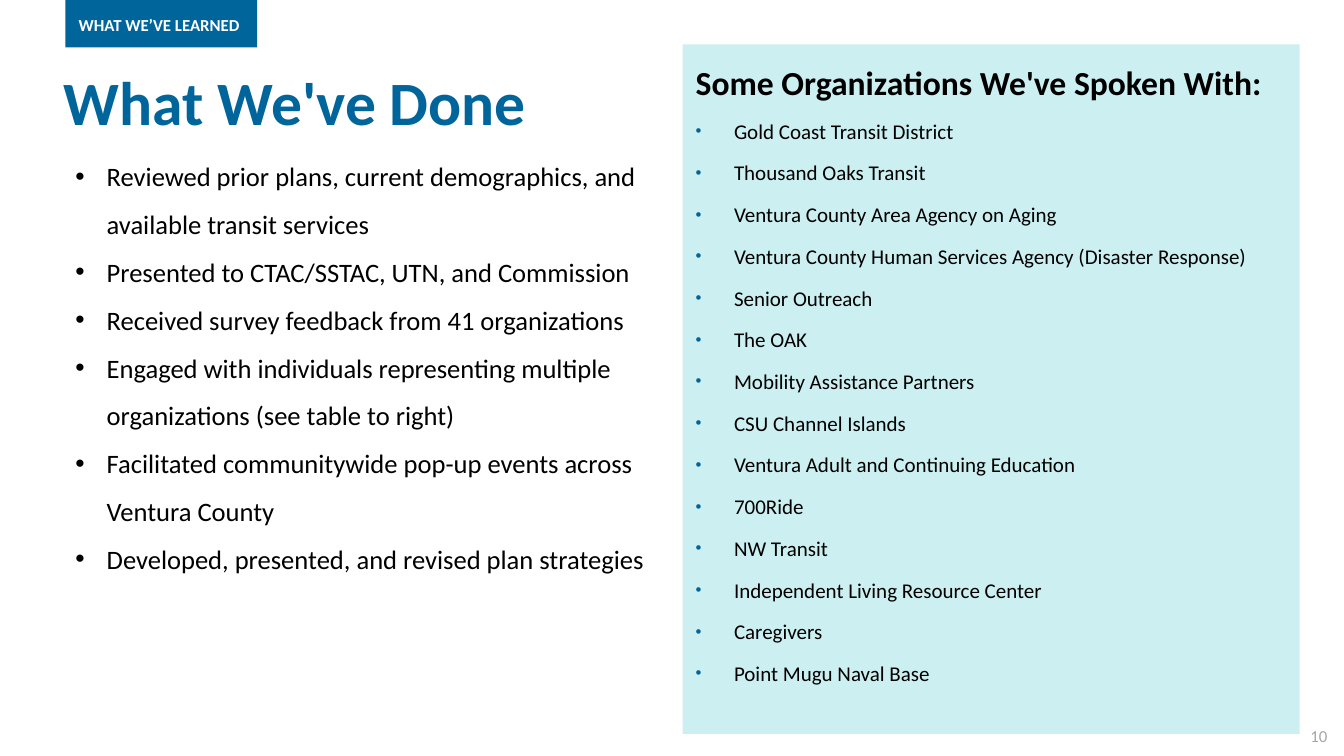
import pptx
import pptx.util
import pptx.dml.color
import pptx.enum.shapes
import pptx.enum.text
import lxml.etree

RGBColor = pptx.dml.color.RGBColor
Inches = pptx.util.Inches
Pt = pptx.util.Pt
PP_ALIGN = pptx.enum.text.PP_ALIGN
MSO_ANCHOR = pptx.enum.text.MSO_ANCHOR

BLUE = RGBColor(0x00, 0x65, 0x9A)
AQUA = RGBColor(0xCC, 0xEF, 0xF1)
GREY = RGBColor(0xA6, 0xA6, 0xA6)
BLACK = RGBColor(0, 0, 0)
WHITE = RGBColor(255, 255, 255)
FONT = "Calibri"
WIDTH, HEIGHT = 13.33, 7.5
PAD = 0.13

DONE = [
    "Reviewed prior plans, current demographics, and available transit services",
    "Presented to CTAC/SSTAC, UTN, and Commission",
    "Received survey feedback from 41 organizations",
    "Engaged with individuals representing multiple organizations (see table to right)",
    "Facilitated communitywide pop-up events across Ventura County",
    "Developed, presented, and revised plan strategies",
]
ORGANIZATIONS = [
    "Gold Coast Transit District",
    "Thousand Oaks Transit",
    "Ventura County Area Agency on Aging",
    "Ventura County Human Services Agency (Disaster Response)",
    "Senior Outreach",
    "The OAK",
    "Mobility Assistance Partners",
    "CSU Channel Islands",
    "Ventura Adult and Continuing Education",
    "700Ride",
    "NW Transit",
    "Independent Living Resource Center",
    "Caregivers",
    "Point Mugu Naval Base",
]


def set_bullet(p, indent, color=None, percent=None):
    """Give the paragraph a hanging round bullet."""
    pPr = p._p.get_or_add_pPr()
    pPr.set("marL", str(Inches(indent)))
    pPr.set("indent", str(-Inches(indent)))
    ns = pptx.oxml.ns.qn
    if color is not None:
        clr = lxml.etree.SubElement(pPr, ns("a:buClr"))
        lxml.etree.SubElement(clr, ns("a:srgbClr")).set("val", str(color))
    if percent:
        lxml.etree.SubElement(pPr, ns("a:buSzPct")).set("val", str(percent * 1000))
    lxml.etree.SubElement(pPr, ns("a:buFont")).set("typeface", "Arial")
    lxml.etree.SubElement(pPr, ns("a:buChar")).set("char", "•")


def add_text(tf, text, size, color=BLACK, bold=False, align=PP_ALIGN.LEFT,
             spacing=1.0, before=0, bullet=None):
    """Write one paragraph, filling the empty first one if there is one."""
    p = tf.paragraphs[0] if not tf.text else tf.add_paragraph()
    p.alignment = align
    p.line_spacing = spacing
    p.space_before = Pt(before)
    if bullet:
        set_bullet(p, **bullet)
    r = p.add_run()
    r.text = text
    r.font.name = FONT
    r.font.size = Pt(size)
    r.font.bold = bold
    r.font.color.rgb = color


def add_frame(s, box, fill=None, pad=None, anchor=MSO_ANCHOR.TOP, wrap=True):
    """Add a text box, or a filled rectangle, and return its text frame."""
    box = [Inches(v) for v in box]
    if fill is None:
        sp = s.shapes.add_textbox(*box)
    else:
        sp = s.shapes.add_shape(pptx.enum.shapes.MSO_SHAPE.RECTANGLE, *box)
        sp.shadow.inherit = False
        sp.fill.solid()
        sp.fill.fore_color.rgb = fill
        sp.line.fill.background()
    tf = sp.text_frame
    tf.word_wrap = wrap
    tf.vertical_anchor = anchor
    if pad is not None:
        tf.margin_left = tf.margin_right = Inches(pad)
        tf.margin_top = tf.margin_bottom = Inches(pad)
    return tf


def add_section_tag(s, box, text):
    tf = add_frame(s, box, fill=BLUE, pad=PAD, wrap=False)
    add_text(tf, text, 12, WHITE, bold=True, spacing=1.1, before=10)


def add_title(s, box, text):
    tf = add_frame(s, box, pad=PAD)
    add_text(tf, text, 44, BLUE, bold=True, spacing=0.8, before=10)


def add_work_list(s, box, items):
    tf = add_frame(s, box)
    for item in items:
        add_text(tf, item, 19, spacing=1.5, bullet={"indent": 0.31})


def add_organization_panel(s, box, heading, names):
    tf = add_frame(s, box, fill=AQUA, pad=PAD)
    add_text(tf, heading, 24, bold=True, spacing=1.1, before=10)
    for name in names:
        add_text(tf, name, 15, spacing=1.1, before=10,
                 bullet={"indent": 0.38, "color": BLUE, "percent": 80})


def add_page_number(s, box, number):
    tf = add_frame(s, box, anchor=MSO_ANCHOR.MIDDLE)
    add_text(tf, str(number), 12, GREY, align=PP_ALIGN.CENTER)


def main():
    prs = pptx.Presentation()
    prs.slide_width, prs.slide_height = Inches(WIDTH), Inches(HEIGHT)
    s = prs.slides.add_slide(prs.slide_layouts[6])
    left = 0.65
    add_title(s, (0.5, 0.65, 5.76, 1.46), "What We've Done")
    add_page_number(s, (WIDTH - 0.5, HEIGHT - 0.4, 0.5, 0.4), 10)
    add_work_list(s, (left, 1.38, 5.92, 4.37), DONE)
    add_organization_panel(s, (6.77, 0.44, 6.12, 6.84),
                           "Some Organizations We've Spoken With:", ORGANIZATIONS)
    add_section_tag(s, (left, 0, 1.9, 0.47), "WHAT WE’VE LEARNED")
    prs.save("out.pptx")


if __name__ == "__main__":
    main()
